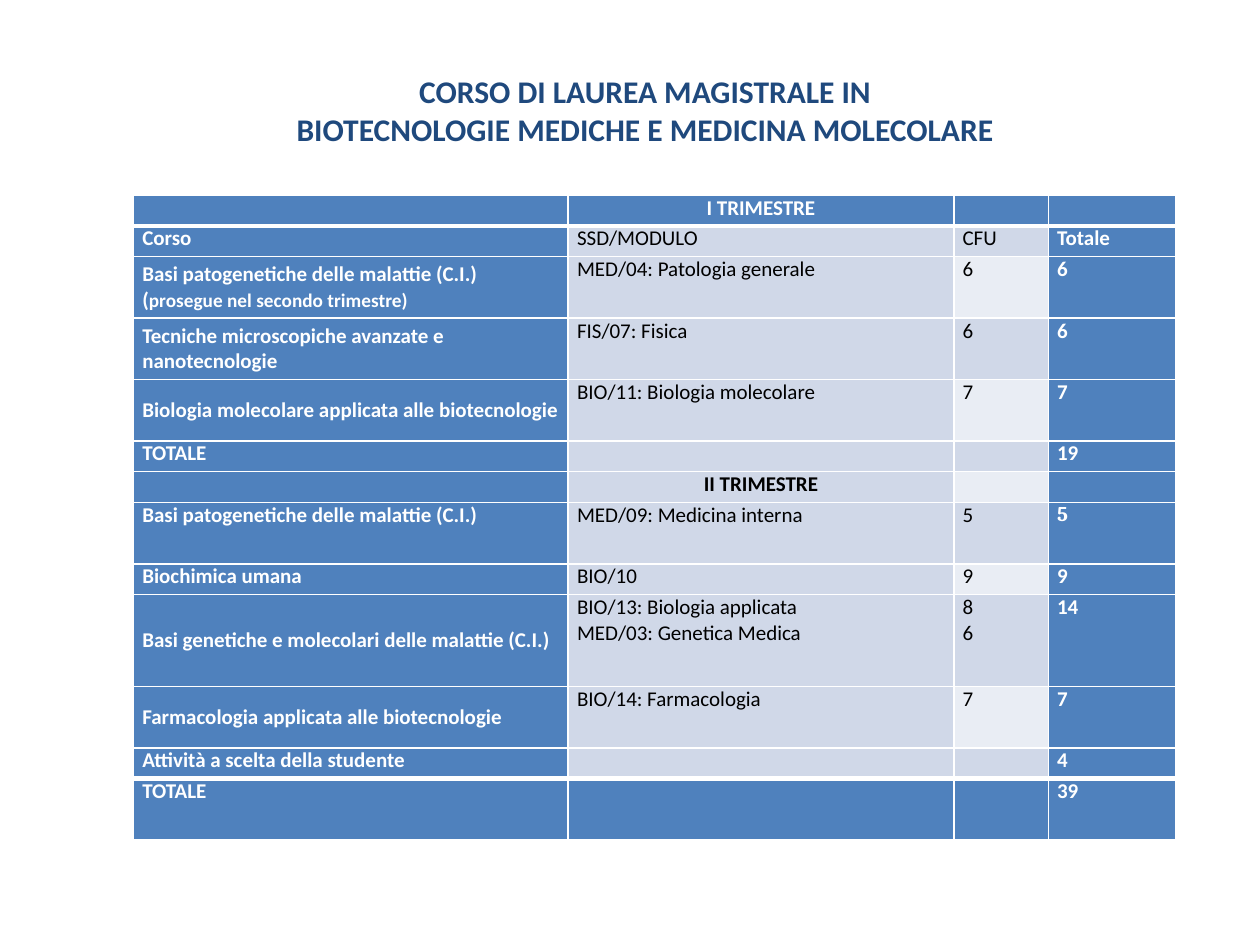
from dataclasses import dataclass

from lxml.etree import SubElement
from pptx import Presentation
from pptx.dml.color import RGBColor as RGB
from pptx.enum.text import MSO_ANCHOR as Anchor, MSO_AUTO_SIZE as AutoSize, PP_ALIGN as Align
from pptx.oxml.ns import qn
from pptx.util import Inches, Pt


@dataclass(frozen=True)
class Theme:
    font: str = "Calibri"
    accent_font: str = "Cambria"
    navy: str = "1F497D"
    blue: str = "4F81BD"
    band_dark: str = "D0D8E8"
    band_light: str = "E9EDF4"
    white: str = "FFFFFF"
    black: str = "000000"
    title_size: int = 18
    body_size: int = 12
    note_size: int = 11
    thin: int = 1
    thick: int = 3


THEME = Theme()
TITLE = ["CORSO DI LAUREA MAGISTRALE IN", "BIOTECNOLOGIE MEDICHE E MEDICINA MOLECOLARE"]
COLUMN_WIDTHS = [3.45, 3.06, 0.75, 1.01]
TABLE_HEIGHT = 5.12
COURSE_NOTE = "prosegue nel secondo trimestre)"

# Each row: height in text lines, then course, module, credits and total.
PLAN = [
    (1, "", "I TRIMESTRE", "", ""),
    (1, "Corso", "SSD/MODULO", "CFU", "Totale"),
    (2, "Basi patogenetiche delle malattie (C.I.)\v(", "MED/04: Patologia generale", "6", "6"),
    (2, "Tecniche microscopiche avanzate e nanotecnologie", "FIS/07: Fisica", "6", "6"),
    (2, "Biologia molecolare applicata alle biotecnologie", "BIO/11: Biologia molecolare", "7", "7"),
    (1, "TOTALE", "", "", "19"),
    (1, "", "II TRIMESTRE", "", ""),
    (2, "Basi patogenetiche delle malattie (C.I.)", "MED/09: Medicina interna", "5", "5"),
    (1, "Biochimica umana", "BIO/10", "9", "9"),
    (3, "Basi genetiche e molecolari delle malattie (C.I.)",
     "BIO/13: Biologia applicata\nMED/03: Genetica Medica", "8\n6", "14"),
    (2, "Farmacologia applicata alle biotecnologie", "BIO/14: Farmacologia", "7", "7"),
    (1, "Attività a scelta della studente", "", "", "4"),
    (2, "TOTALE", "", "", "39"),
]
LAST = len(PLAN) - 1
FIRST_MODULE, SECOND_TERM, INTERNAL_MEDICINE = 2, 6, 7
CENTRED_COURSES = {2, 3, 4, 9, 10}


class SlideBuilder:
    def __init__(self, slide, theme):
        self.slide = slide
        self.theme = theme

    def style(self, paragraph, size, color, bold, align=Align.LEFT, font=None):
        paragraph.alignment = align
        paragraph.font.name = font or self.theme.font
        paragraph.font.size = Pt(size)
        paragraph.font.bold = bold
        paragraph.font.color.rgb = RGB.from_string(color)

    def title(self, lines, left, top, width, height):
        box = self.slide.shapes.add_textbox(*map(Inches, (left, top, width, height)))
        frame = box.text_frame
        frame.word_wrap = True
        frame.auto_size = AutoSize.SHAPE_TO_FIT_TEXT
        frame.text = "\n".join(lines)
        for paragraph in frame.paragraphs:
            self.style(paragraph, self.theme.title_size, self.theme.navy, True, Align.CENTER)

    def borders(self, cell, row):
        above = self.theme.thick if row in (1, LAST) else self.theme.thin
        below = self.theme.thick if row in (0, LAST - 1) else self.theme.thin
        sides = {"L": self.theme.thin, "R": self.theme.thin, "T": above, "B": below}
        properties = cell._tc.get_or_add_tcPr()
        for side, width in sides.items():
            line = SubElement(properties, qn(f"a:ln{side}"), w=str(Pt(width)))
            SubElement(SubElement(line, qn("a:solidFill")), qn("a:srgbClr"), val=self.theme.white)

    def cell(self, cell, row, column, text):
        theme = self.theme
        on_blue = row in (0, LAST) or column in (0, 3)
        band = theme.band_light if column == 2 and row % 2 == 0 else theme.band_dark
        heading = column == 1 and row in (0, SECOND_TERM)
        total = column == 3 and row == INTERNAL_MEDICINE

        self.borders(cell, row)
        cell.fill.solid()
        cell.fill.fore_color.rgb = RGB.from_string(theme.blue if on_blue else band)
        cell.margin_left = cell.margin_right = Inches(0.07)
        cell.margin_top = cell.margin_bottom = 0
        if column == 0 and row in CENTRED_COURSES:
            cell.vertical_anchor = Anchor.MIDDLE
        cell.text_frame.text = text
        for paragraph in cell.text_frame.paragraphs:
            self.style(paragraph, theme.body_size, theme.white if on_blue else theme.black,
                       on_blue or heading, Align.CENTER if heading else Align.LEFT,
                       theme.accent_font if total else theme.font)
            if not text:
                SubElement(paragraph._p, qn("a:endParaRPr"), sz=str(theme.body_size * 100))

    def study_plan(self, plan, left, top):
        frame = self.slide.shapes.add_table(
            len(plan), len(COLUMN_WIDTHS), Inches(left), Inches(top),
            Inches(sum(COLUMN_WIDTHS)), Inches(TABLE_HEIGHT))
        table = frame.table
        table.first_row = table.horz_banding = False
        for column, width in zip(table.columns, COLUMN_WIDTHS):
            column.width = Inches(width)
        line_height = TABLE_HEIGHT / sum(lines for lines, *_ in plan)
        for row, (lines, *texts) in enumerate(plan):
            table.rows[row].height = Inches(lines * line_height)
            for column, text in enumerate(texts):
                self.cell(table.cell(row, column), row, column, text)
        note = table.cell(FIRST_MODULE, 0).text_frame.paragraphs[0].add_run()
        note.text = COURSE_NOTE
        note.font.size = Pt(self.theme.note_size)


def main():
    deck = Presentation()
    deck.slide_width, deck.slide_height = Inches(10), Inches(7.5)
    builder = SlideBuilder(deck.slides.add_slide(deck.slide_layouts[6]), THEME)
    builder.title(TITLE, 2.01, 0.52, 6.22, 0.71)
    builder.study_plan(PLAN, 1.06, 1.55)
    deck.save("out.pptx")


if __name__ == "__main__":
    main()
